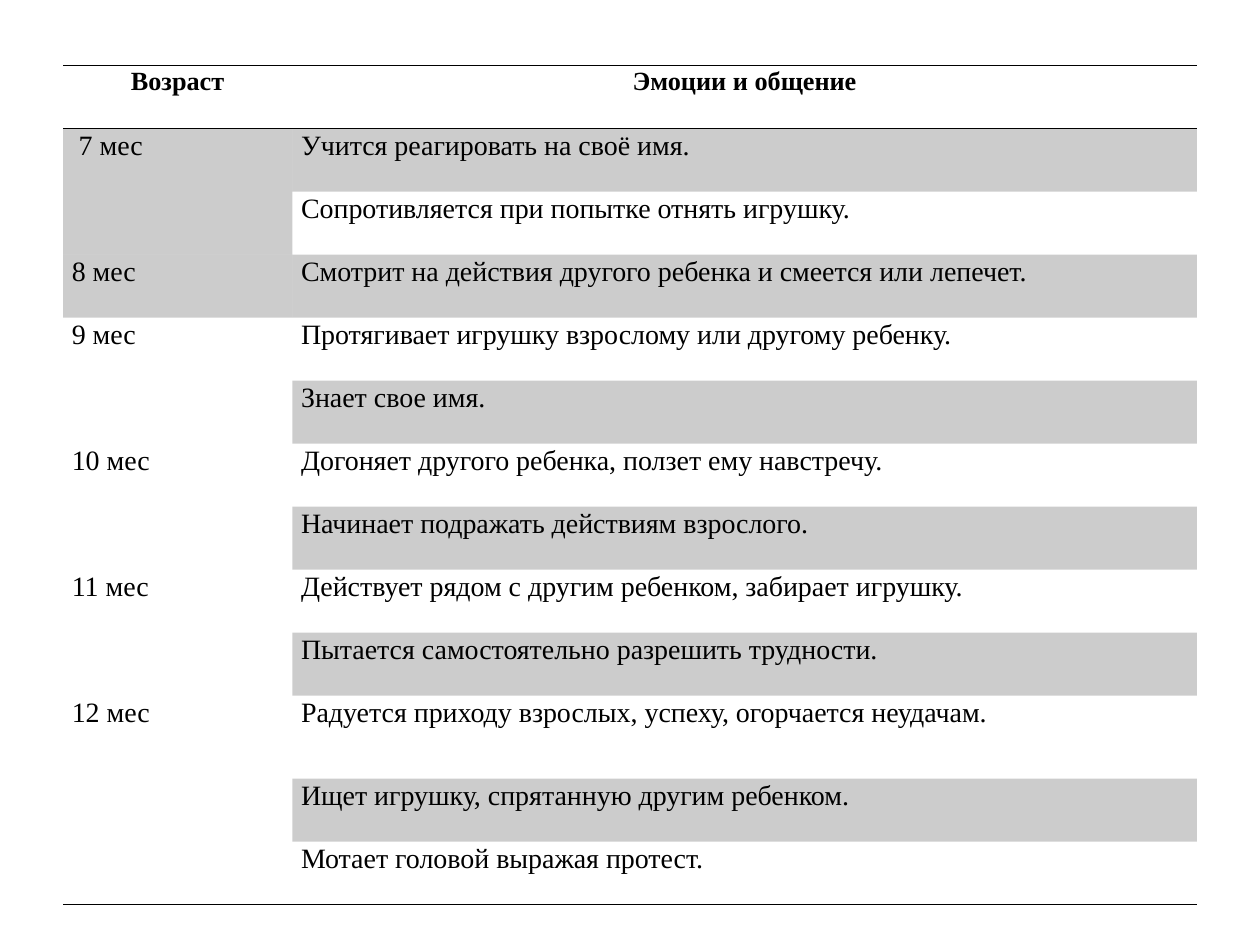
from dataclasses import dataclass

from lxml import etree
from pptx import Presentation
from pptx import util as u
from pptx.dml.color import RGBColor
from pptx.enum import text
from pptx.oxml import ns


@dataclass
class Theme:
    ink: str = "000000"
    tint: int = 20  # opacity of a shaded band, percent
    font: str = "Times New Roman"
    head: int = 15
    body: int = 16
    rule: int = 1
    plain: str = "{2D5ABB26-0587-4C30-8999-92F81FD0307C}"  # no style, no grid


HEADS = ["Возраст", "Эмоции и общение"]
AGES = [
    (" 7 мес", ["Учится реагировать на своё имя.",
                "Сопротивляется при попытке отнять игрушку."]),
    ("8 мес", ["Смотрит на действия другого ребенка и смеется или лепечет."]),
    ("9 мес", ["Протягивает игрушку взрослому или другому ребенку.",
               "Знает свое имя."]),
    ("10 мес", ["Догоняет другого ребенка, ползет ему навстречу.",
                "Начинает подражать действиям взрослого."]),
    ("11 мес", ["Действует рядом с другим ребенком, забирает игрушку.",
                "Пытается самостоятельно разрешить трудности."]),
    ("12 мес", ["Радуется приходу взрослых, успеху, огорчается неудачам.",
                "Ищет игрушку, спрятанную другим ребенком.",
                "Мотает головой выражая протест."]),
]
WIDTHS = [1.82, 7.18]
ROW, TALL = 0.5, 0.66


class Deck:
    def __init__(self, theme):
        self.theme = theme
        self.prs = Presentation()
        self.prs.slide_width, self.prs.slide_height = u.Inches(10), u.Inches(7.5)
        self.slide = self.prs.slides.add_slide(self.prs.slide_layouts[6])

    def table(self, left, top, widths, heights):
        frame = self.slide.shapes.add_table(
            len(heights), len(widths), u.Inches(left), u.Inches(top),
            u.Inches(sum(widths)), u.Inches(sum(heights)))
        grid = frame.table
        grid.horz_banding = False
        frame._element.find(".//" + ns.qn("a:tableStyleId")).text = self.theme.plain
        for col, width in zip(grid.columns, widths):
            col.width = u.Inches(width)
        for row, height in zip(grid.rows, heights):
            row.height = u.Inches(height)
        return grid

    def border(self, cell, side):
        props = cell._tc.get_or_add_tcPr()
        line = etree.SubElement(props, ns.qn("a:ln" + side), w=str(u.Pt(self.theme.rule)))
        fill = etree.SubElement(line, ns.qn("a:solidFill"))
        etree.SubElement(fill, ns.qn("a:srgbClr"), val=self.theme.ink)

    def shade(self, cell):
        cell.fill.solid()
        cell.fill.fore_color.rgb = RGBColor.from_string(self.theme.ink)
        color = cell._tc.tcPr.find(".//" + ns.qn("a:solidFill") + "/" + ns.qn("a:srgbClr"))
        etree.SubElement(color, ns.qn("a:alpha"), val=str(self.theme.tint * 1000))

    def cell(self, cell, words, head=False, band=False, sides="", after=0):
        cell.margin_left = cell.margin_right = u.Inches(0.07)
        cell.margin_top = cell.margin_bottom = 0
        # Borders stand before the fill in the cell properties
        for side in sides:
            self.border(cell, side)
        if band:
            self.shade(cell)
        else:
            cell.fill.background()
        para = cell.text_frame.paragraphs[0]
        para.text = words
        para.line_spacing = 1.07
        para.space_after = u.Pt(after)
        para.alignment = text.PP_ALIGN.CENTER if head else text.PP_ALIGN.LEFT
        for run in para.runs:
            run.font.name = self.theme.font
            run.font.size = u.Pt(self.theme.head if head else self.theme.body)
            run.font.bold = head
            run.font.color.rgb = RGBColor.from_string(self.theme.ink)


def main():
    deck = Deck(Theme())
    last = sum(len(skills) for _, skills in AGES)
    heights = [ROW] * (last + 1)
    heights[-3] = TALL
    grid = deck.table(0.5, 0.52, WIDTHS, heights)

    # Header row
    for col, words in enumerate(HEADS):
        deck.cell(grid.cell(0, col), words, head=True, sides="TB")

    # One merged age cell beside its skills; odd rows are shaded
    row = 1
    for age, skills in AGES:
        end = row + len(skills) - 1
        first = grid.cell(row, 0)
        if end > row:
            first.merge(grid.cell(end, 0))
        deck.cell(first, age, band=row % 2 == 1, sides="B" if end == last else "")
        for at, skill in enumerate(skills, row):
            deck.cell(grid.cell(at, 1), skill, band=at % 2 == 1,
                      sides="B" if at == last else "", after=8)
        row = end + 1
    deck.border(grid.cell(last, 0), "B")

    deck.prs.save("out.pptx")


if __name__ == "__main__":
    main()
